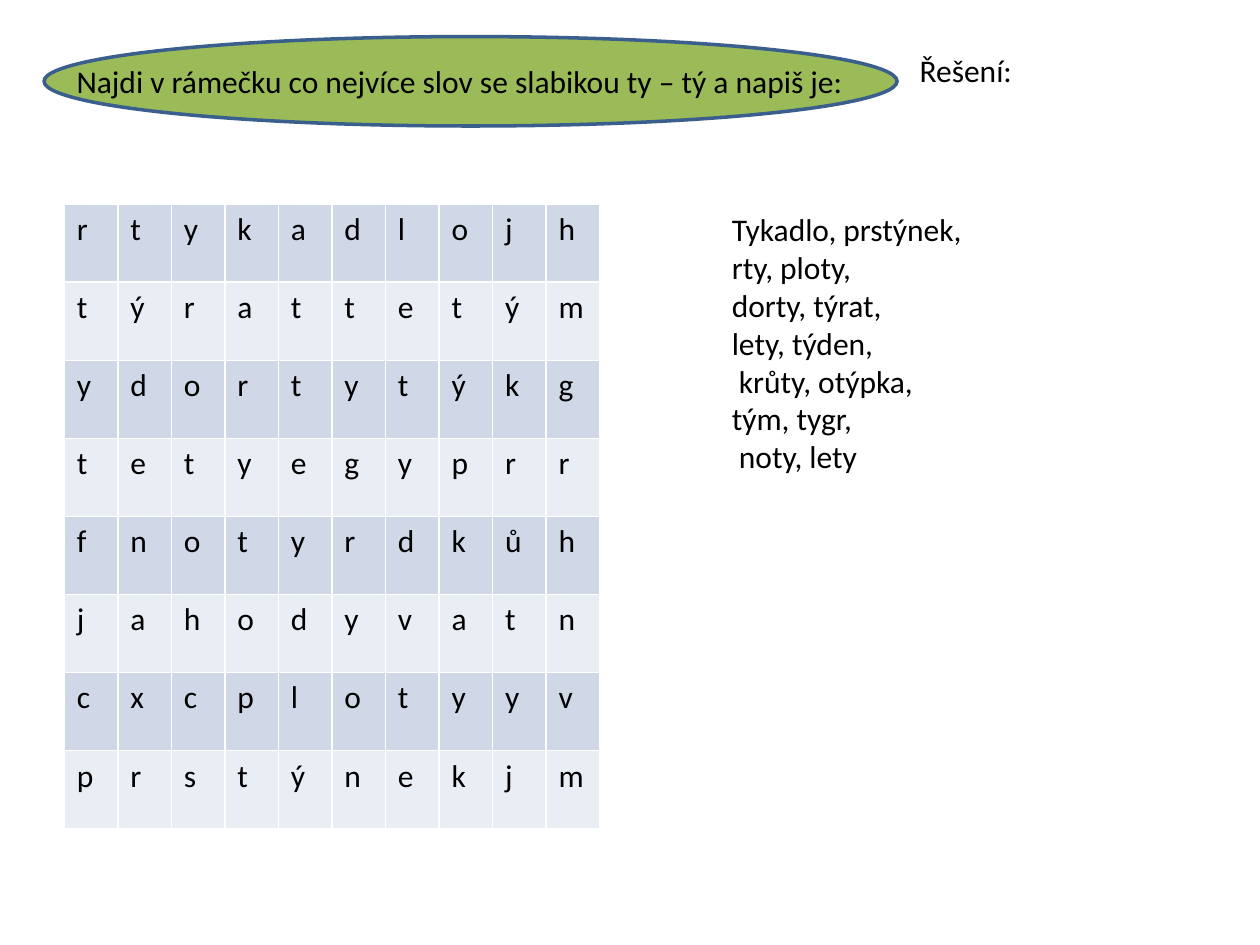
from pptx import Presentation
from pptx import util as u
from pptx.dml.color import RGBColor
from pptx.enum import shapes, text

PX = u.Inches(1) // 100  # 100 px to the inch

BLACK = RGBColor(0x00, 0x00, 0x00)
GREEN = RGBColor(0x9B, 0xBB, 0x59)
BLUE = RGBColor(0x3A, 0x5F, 0x8C)
BANDS = RGBColor(0xD0, 0xD8, 0xE8), RGBColor(0xE9, 0xED, 0xF4)

TASK = "Najdi v rámečku co nejvíce slov se slabikou ty – tý a napiš je:"
LETTERS = [
    "rtykadlojh",
    "týrattetým",
    "ydortytýkg",
    "tetyegyprr",
    "fnotyrdkůh",
    "jahodyvatn",
    "cxcplotyyv",
    "prstýnekjm",
]
WORDS = [
    "Tykadlo, prstýnek,",
    "rty, ploty,",
    "dorty, týrat,",
    "lety, týden,",
    " krůty, otýpka,",
    "tým, tygr,",
    " noty, lety",
]


def emu(*box):
    return [n * PX for n in box]


def write(frame, lines, font="Calibri", size=18, color=BLACK):
    """Fill a text frame with one paragraph per line."""
    for i, line in enumerate(lines):
        para = frame.paragraphs[0] if i == 0 else frame.add_paragraph()
        run = para.add_run()
        run.text = line
        run.font.name = font
        run.font.size = u.Pt(size)
        run.font.color.rgb = color


def label(slide, box, lines, **style):
    frame = slide.shapes.add_textbox(*emu(*box)).text_frame
    frame.word_wrap = True
    frame.auto_size = text.MSO_AUTO_SIZE.SHAPE_TO_FIT_TEXT
    write(frame, lines, **style)


def banner(slide, x, y, w, h):
    """Oval with the task written across it."""
    oval = slide.shapes.add_shape(shapes.MSO_SHAPE.OVAL, *emu(x, y, w, h))
    oval.shadow.inherit = False
    oval.fill.solid()
    oval.fill.fore_color.rgb = GREEN
    oval.line.color.rgb = BLUE
    oval.line.width = u.Pt(2)
    label(slide, (x + 16, y + 15, 843, 40), [TASK])


def grid(slide, x, y, w, h):
    """Letter grid with equal cells and banded rows."""
    rows, cols = len(LETTERS), len(LETTERS[0])
    table = slide.shapes.add_table(rows, cols, *emu(x, y, w, h)).table
    table.first_row = False
    for col in table.columns:
        col.width = w * PX // cols
    for r, row in enumerate(LETTERS):
        table.rows[r].height = h * PX // rows
        for c, letter in enumerate(row):
            cell = table.cell(r, c)
            cell.fill.solid()
            cell.fill.fore_color.rgb = BANDS[r % 2]
            write(cell.text_frame, [letter])


def main():
    deck = Presentation()
    deck.slide_width, deck.slide_height = emu(1000, 750)
    slide = deck.slides.add_slide(deck.slide_layouts[6])
    banner(slide, 35, 29, 677, 71)
    grid(slide, 51, 162, 425, 496)
    label(slide, (571, 162, 386, 222), WORDS)
    label(slide, (720, 36, 165, 40), ["Řešení:"])
    deck.save("out.pptx")


if __name__ == "__main__":
    main()
